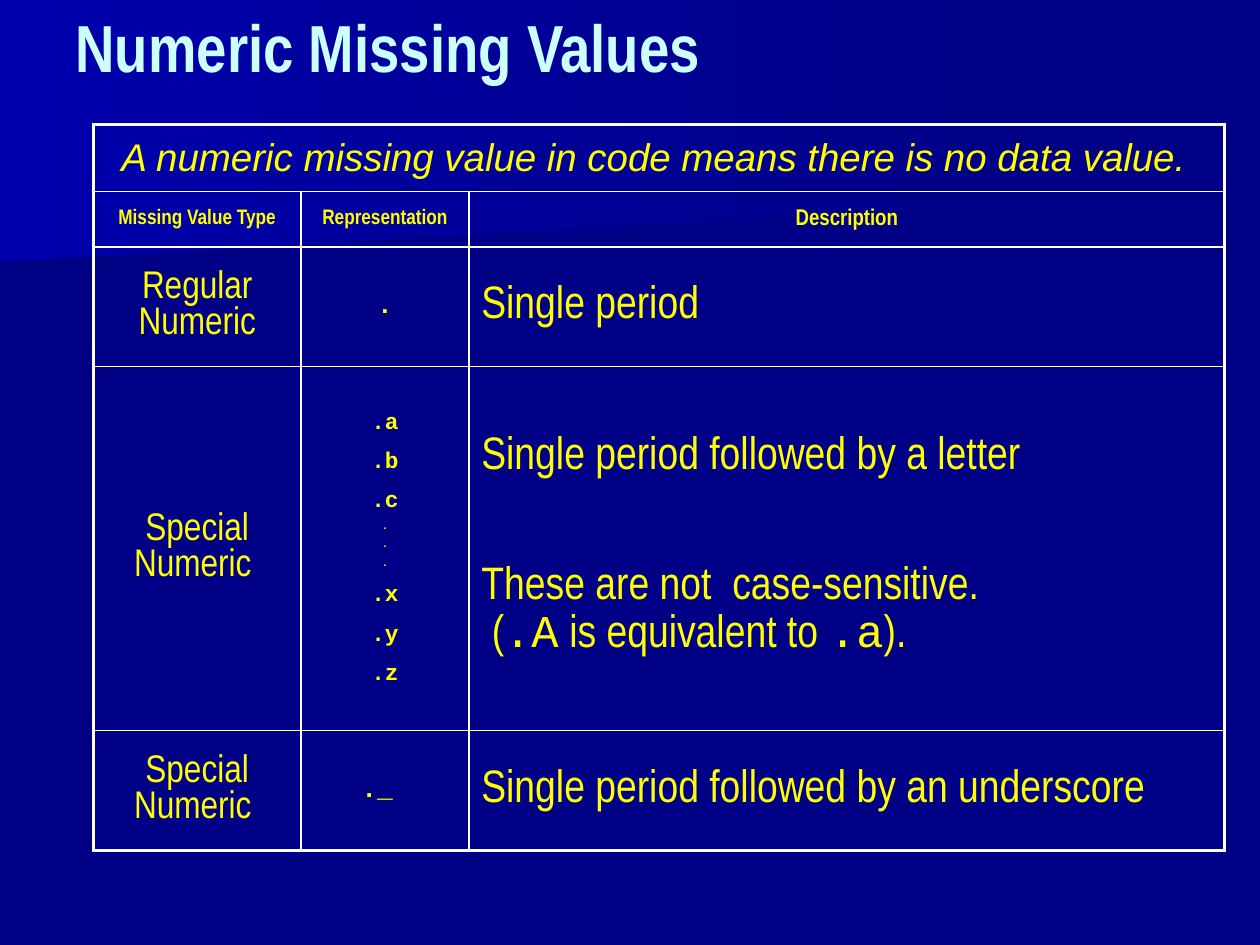
from lxml import etree
from pptx import Presentation
from pptx.dml.color import RGBColor
from pptx.enum import text
from pptx.oxml import ns
from pptx.util import Cm, Pt

BACKGROUND, WHITE, YELLOW, PALE = "000086", "FFFFFF", "FFFF00", "CCFFFF"
TITLE = "Numeric Missing Values"

# Text formats: font name, size, bold, italic
INTRO = dict(name="Arial", size=22, italic=True)
HEADING = dict(name="Arial Narrow", size=12, bold=True)
WIDE_HEADING = {**HEADING, "size": 13}
TYPE = dict(name="Arial Narrow", size=22)
SYMBOL = dict(name="Courier New", size=15, bold=True)
LETTER = {**SYMBOL, "size": 13}
DOT = {**SYMBOL, "size": 6}
DESCRIPTION = dict(name="Arial Narrow", size=26)
CODE = dict(name="Courier New", size=26)

# A cell is a list of paragraphs, a paragraph a list of (wording, format) runs
SPECIAL = [[("Special\nNumeric ", TYPE)]]
LETTERS = [[(wording, DOT if wording == "." else LETTER)]
           for wording in (".a", ".b", ".c", ".", ".", ".", ".x", ".y", ".z")]
ROWS = [
    [[[("A numeric missing value in code means there is no data value. ", INTRO)]]],
    [[[("Missing Value Type", HEADING)]], [[("Representation", HEADING)]],
     [[("Description", WIDE_HEADING)]]],
    [[[("Regular\nNumeric", TYPE)]], [[(".", SYMBOL)]],
     [[("Single period", DESCRIPTION)]]],
    [SPECIAL, LETTERS,
     [[("Single period followed by a letter", DESCRIPTION)],
      [("These are not  case-sensitive.\n (", DESCRIPTION), (".A", CODE),
       (" is equivalent to ", DESCRIPTION), (".a", CODE), (").", DESCRIPTION)]]],
    [SPECIAL, [[("._ ", SYMBOL)]],
     [[("Single period followed by an underscore", DESCRIPTION)]]],
]
COLUMN_WIDTHS = [4.19, 3.38, 15.24]
ROW_HEIGHTS = [1.35, 1.12, 2.41, 7.34, 2.41]
TABLE_LEFT, TABLE_TOP = 1.88, 2.51
OUTER_LINE, INNER_LINE = 2.25, 1
DESCRIPTION_GAP = Pt(50)

# Background beams: outline in cm, colour at the left edge
BEAMS = [
    ([(19.76, 3.89), (0, 5.51), (0, 2.57), (19.79, 2.57), (19.76, 3.25)], "000083"),
    ([(20.12, 4.11), (0, 5.28), (0, 0), (20.12, 0)], "0000AC"),
]


def rgb(value):
    return RGBColor.from_string(value)


def add_beam(slide, outline, start_colour):
    points = [(Cm(x), Cm(y)) for x, y in outline]
    builder = slide.shapes.build_freeform(*points[0])
    builder.add_line_segments(points[1:], close=True)
    beam = builder.convert_to_shape()
    beam.shadow.inherit = False
    beam.line.fill.background()
    beam.fill.gradient()
    beam.fill.gradient_angle = 0
    for stop, colour in zip(beam.fill.gradient_stops, (start_colour, BACKGROUND)):
        stop.color.rgb = rgb(colour)


def add_run(paragraph, wording, style, colour):
    """Add wording in one format, with a line break at each newline."""
    for number, line in enumerate(wording.split("\n")):
        if number:
            paragraph.add_line_break()
        run = paragraph.add_run()
        run.text = line
        for key, value in {"bold": False, "italic": False, **style}.items():
            setattr(run.font, key, Pt(value) if key == "size" else value)
        run.font.color.rgb = rgb(colour)


def set_borders(cell, widths):
    properties = cell._tc.get_or_add_tcPr()
    for side, width in widths.items():
        line = etree.SubElement(properties, ns.qn(f"a:ln{side}"), w=str(Pt(width)))
        fill = etree.SubElement(line, ns.qn("a:solidFill"))
        etree.SubElement(fill, ns.qn("a:srgbClr"), val=WHITE)


def fill_cell(cell, paragraphs, centred):
    cell.vertical_anchor = text.MSO_ANCHOR.MIDDLE
    frame = cell.text_frame
    for number, runs in enumerate(paragraphs):
        paragraph = frame.add_paragraph() if number else frame.paragraphs[0]
        paragraph.alignment = text.PP_ALIGN.CENTER if centred else text.PP_ALIGN.LEFT
        if number and centred:
            spacing = etree.SubElement(paragraph._p.get_or_add_pPr(), ns.qn("a:spcBef"))
            etree.SubElement(spacing, ns.qn("a:spcPct"), val="60000")
        elif number:
            paragraph.space_before = DESCRIPTION_GAP
        for wording, style in runs:
            add_run(paragraph, wording, style, YELLOW)


def add_values_table(slide):
    last_row, last_column = len(ROWS) - 1, len(COLUMN_WIDTHS) - 1
    table = slide.shapes.add_table(
        len(ROWS), len(COLUMN_WIDTHS), Cm(TABLE_LEFT), Cm(TABLE_TOP),
        Cm(sum(COLUMN_WIDTHS)), Cm(sum(ROW_HEIGHTS))).table
    table.first_row = table.horz_banding = False
    for column, width in zip(table.columns, COLUMN_WIDTHS):
        column.width = Cm(width)
    for row, height in zip(table.rows, ROW_HEIGHTS):
        row.height = Cm(height)
    table.cell(0, 0).merge(table.cell(0, last_column))

    for r, contents in enumerate(ROWS):
        spans_all = len(contents) == 1
        for c in range(last_column + 1):
            cell = table.cell(r, c)
            on_edge = {"L": c == 0 or spans_all, "R": c == last_column or spans_all,
                       "T": r == 0, "B": r == last_row}
            set_borders(cell, {side: OUTER_LINE if outer else INNER_LINE
                               for side, outer in on_edge.items()})
            cell.fill.background()
            if c < len(contents):
                fill_cell(cell, contents[c], centred=r < 2 or c < last_column)


def set_title(slide):
    title = slide.shapes.title
    title.element.getparent().append(title.element)  # in front of the beams
    title.left, title.top, title.width, title.height = (
        Cm(1.27), Cm(-0.53), Cm(23.7), Cm(3.18))
    frame = title.text_frame
    frame.word_wrap = True
    frame.auto_size = text.MSO_AUTO_SIZE.NONE
    frame.vertical_anchor = text.MSO_ANCHOR.MIDDLE
    paragraph = frame.paragraphs[0]
    paragraph.alignment = text.PP_ALIGN.LEFT
    paragraph.line_spacing = 0.85
    add_run(paragraph, TITLE, dict(name="Arial Narrow", size=38, bold=True), PALE)


def main():
    deck = Presentation()
    deck.slide_width, deck.slide_height = Cm(25.4), Cm(19.05)
    slide = deck.slides.add_slide(deck.slide_layouts[5])
    slide.background.fill.solid()
    slide.background.fill.fore_color.rgb = rgb(BACKGROUND)
    for outline, start_colour in BEAMS:
        add_beam(slide, outline, start_colour)
    add_values_table(slide)
    set_title(slide)
    deck.save("out.pptx")


if __name__ == "__main__":
    main()
